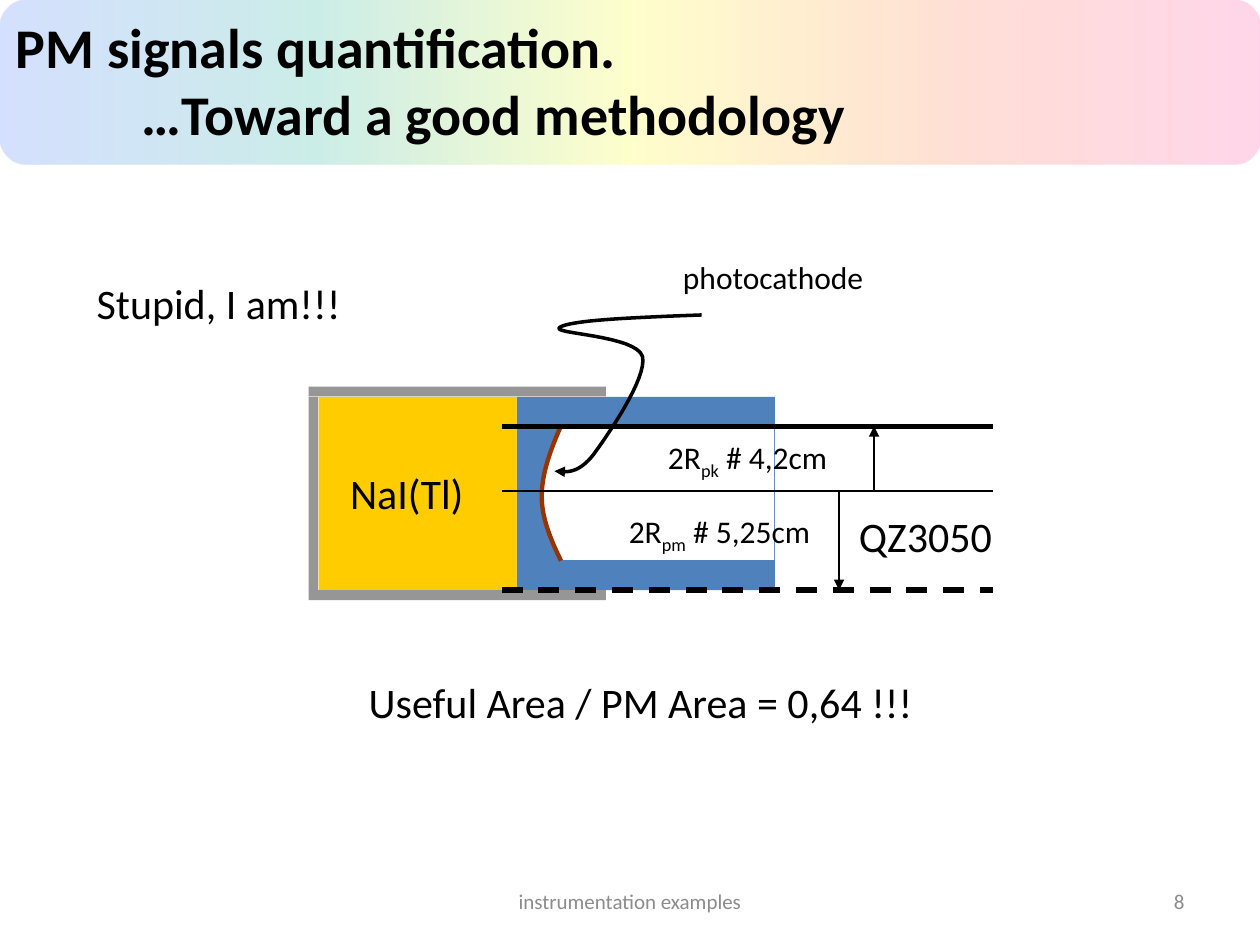
"""Build the slide on photomultiplier signal quantification."""
import lxml.etree
import pptx
import pptx.dml.color
import pptx.enum.dml
import pptx.enum.shapes
import pptx.enum.text
import pptx.oxml
import pptx.oxml.ns
import pptx.util

Pt = pptx.util.Pt
RGBColor = pptx.dml.color.RGBColor
SHAPE = pptx.enum.shapes.MSO_SHAPE
ALIGN = pptx.enum.text.PP_ALIGN
qn = pptx.oxml.ns.qn

BLACK = RGBColor(0x00, 0x00, 0x00)
WHITE = RGBColor(0xFF, 0xFF, 0xFF)
FOOTER_GRAY = RGBColor(0x8C, 0x8C, 0x8C)
CASE_GRAY = RGBColor(0x96, 0x96, 0x96)
TUBE_BLUE = RGBColor(0x4F, 0x81, 0xBD)
CRYSTAL_YELLOW = RGBColor(0xFF, 0xCC, 0x00)
CATHODE_BROWN = RGBColor(0x99, 0x33, 0x00)
RAINBOW = [RGBColor(0xFF, 0x33, 0x99), RGBColor(0xFF, 0x66, 0x33), RGBColor(0xFF, 0xFF, 0x00),
           RGBColor(0x01, 0xA7, 0x8F), RGBColor(0x33, 0x66, 0xFF)]

prs = pptx.Presentation()
prs.slide_width, prs.slide_height = Pt(720), Pt(540)
slide = prs.slides.add_slide(prs.slide_layouts[6])
shapes = slide.shapes


def add_text(box, lines, size, color=BLACK, bold=False, align=ALIGN.LEFT, wrap=False):
    tf = shapes.add_textbox(*map(Pt, box)).text_frame
    tf.word_wrap = wrap
    if wrap:
        tf.vertical_anchor = pptx.enum.text.MSO_ANCHOR.MIDDLE
    else:
        tf.auto_size = pptx.enum.text.MSO_AUTO_SIZE.SHAPE_TO_FIT_TEXT
    for i, runs in enumerate(lines):
        p = tf.add_paragraph() if i else tf.paragraphs[0]
        p.alignment = align
        p.font.name, p.font.size, p.font.bold = "Calibri", Pt(size), bold
        p.font.color.rgb = color
        for j, text in enumerate(runs):
            r = p.add_run()
            r.text = text
            if j == 1:
                r.font._element.set("baseline", "-25000")
    return tf


def add_curve(points, color, width, steps=16):
    fb = shapes.build_freeform(*map(Pt, points[0]), scale=1.0)
    vertices = []
    for k in range(0, len(points) - 1, 3):
        a, b, c, d = points[k:k + 4]
        for n in range(1, steps + 1):
            t = n / steps
            u = 1 - t
            vertices.append([Pt(u**3 * a[i] + 3 * u * u * t * b[i] + 3 * u * t * t * c[i] + t**3 * d[i])
                             for i in (0, 1)])
    fb.add_line_segments(vertices, close=False)
    s = fb.convert_to_shape()
    s.shadow.inherit = False
    s.fill.background()
    s.line.color.rgb, s.line.width = color, Pt(width)
    return s


banner = shapes.add_shape(SHAPE.ROUNDED_RECTANGLE, 0, 0, Pt(720), Pt(94))
banner.shadow.inherit = False
banner.line.fill.background()
banner.fill.background()
stops = "".join(f'<a:gs pos="{i * 25000}"><a:srgbClr val="{c}"><a:alpha val="20000"/></a:srgbClr></a:gs>'
                for i, c in enumerate(RAINBOW))
spPr = banner._element.spPr
spPr.replace(spPr.find(qn("a:noFill")), pptx.oxml.parse_xml(
    f'<a:gradFill {pptx.oxml.ns.nsdecls("a")} rotWithShape="1"><a:gsLst>{stops}</a:gsLst>'
    '<a:lin ang="10800000" scaled="0"/></a:gradFill>'))

tf = add_text((2, 3.6, 492.5, 85), [["PM signals quantification."], ["…Toward a good methodology"]], 32, bold=True)
tf.paragraphs[1]._p.get_or_add_pPr().set("marL", str(Pt(72)))
add_text((246, 500.5, 228, 28.8), [["instrumentation examples"]], 12, FOOTER_GRAY, align=ALIGN.CENTER, wrap=True)
add_text((516, 500.5, 168, 28.8), [["8"]], 12, FOOTER_GRAY, align=ALIGN.RIGHT, wrap=True)

add_text((48.2, 154.8, 155.5, 36), [["Stupid, I am!!!"]], 24)

for *box, color in [(295.2, 226.8, 147.6, 110.4, TUBE_BLUE),
                    (320.6, 243.4, 121.8, 76.6, WHITE),
                    (182, 226.8, 113.2, 110.6, CRYSTAL_YELLOW),
                    (176.4, 221, 169.9, 5.5, CASE_GRAY),
                    (176.4, 337.2, 169.9, 5.8, CASE_GRAY),
                    (176.4, 226.8, 5.5, 110.6, CASE_GRAY)]:
    s = shapes.add_shape(SHAPE.RECTANGLE, *map(Pt, box))
    s.shadow.inherit = False
    s.fill.solid()
    s.fill.fore_color.rgb = color
    s.line.fill.background()
    if color == WHITE:
        cathode = add_curve([(320.6, 243.4), (314.6, 257), (309.6, 270.7), (309.6, 283.7),
                             (309.6, 295.9), (314.6, 308.2), (320.6, 320.4)], CATHODE_BROWN, 2.5)
        cathode.fill.solid()
        cathode.fill.fore_color.rgb = WHITE

LEFT, RIGHT = 286.6, 567.4
EDGE, AXIS, WALL = 243.6, 280.6, 337.2
arrows = []
for x1, y1, x2, y2, width in [(LEFT, EDGE, RIGHT, EDGE, 3), (LEFT, AXIS, RIGHT, AXIS, 0.75),
                              (LEFT, WALL, RIGHT, WALL, 3), (499.5, AXIS, 499.5, EDGE, 0.75),
                              (479.5, AXIS, 479.5, WALL, 0.75)]:
    s = shapes.add_connector(pptx.enum.shapes.MSO_CONNECTOR.STRAIGHT, *map(Pt, (x1, y1, x2, y2)))
    s.line.color.rgb, s.line.width = BLACK, Pt(width)
    if y1 == WALL:
        s.line.dash_style = pptx.enum.dml.MSO_LINE.DASH
    lxml.etree.SubElement(s._element.spPr, qn("a:effectLst"))
    if x1 == x2:
        arrows.append(s)

for x, y, w, size, runs in [(374.6, 246.6, 118.8, 18, ["2R", "pk", " # 4,2cm"]),
                            (352.2, 289, 133.2, 18, ["2R", "pm", " # 5,25cm"]),
                            (203.6, 383, 334, 24, ["Useful Area / PM Area = 0,64 !!!"]),
                            (193, 263.5, 80, 24, ["NaI(Tl)"]),
                            (483.8, 288, 100, 24, ["QZ3050"]),
                            (383.2, 144, 118.8, 18, ["photocathode"])]:
    add_text((x, y, w, size * 1.2 + 7.2), [runs], size)

arrows.append(add_curve([(401, 180), (363.6, 181.4), (325.4, 182.9), (319.7, 187.2),
                         (314.6, 190.8), (363.6, 191.5), (367.2, 203.8),
                         (370, 216), (347, 249.1), (339.1, 259.9),
                         (330.5, 270.7), (324, 270), (316.8, 269.3)], BLACK, 2))
for s in arrows:
    lxml.etree.SubElement(s._element.spPr.find(qn("a:ln")), qn("a:tailEnd"), type="triangle")

prs.save("out.pptx")
